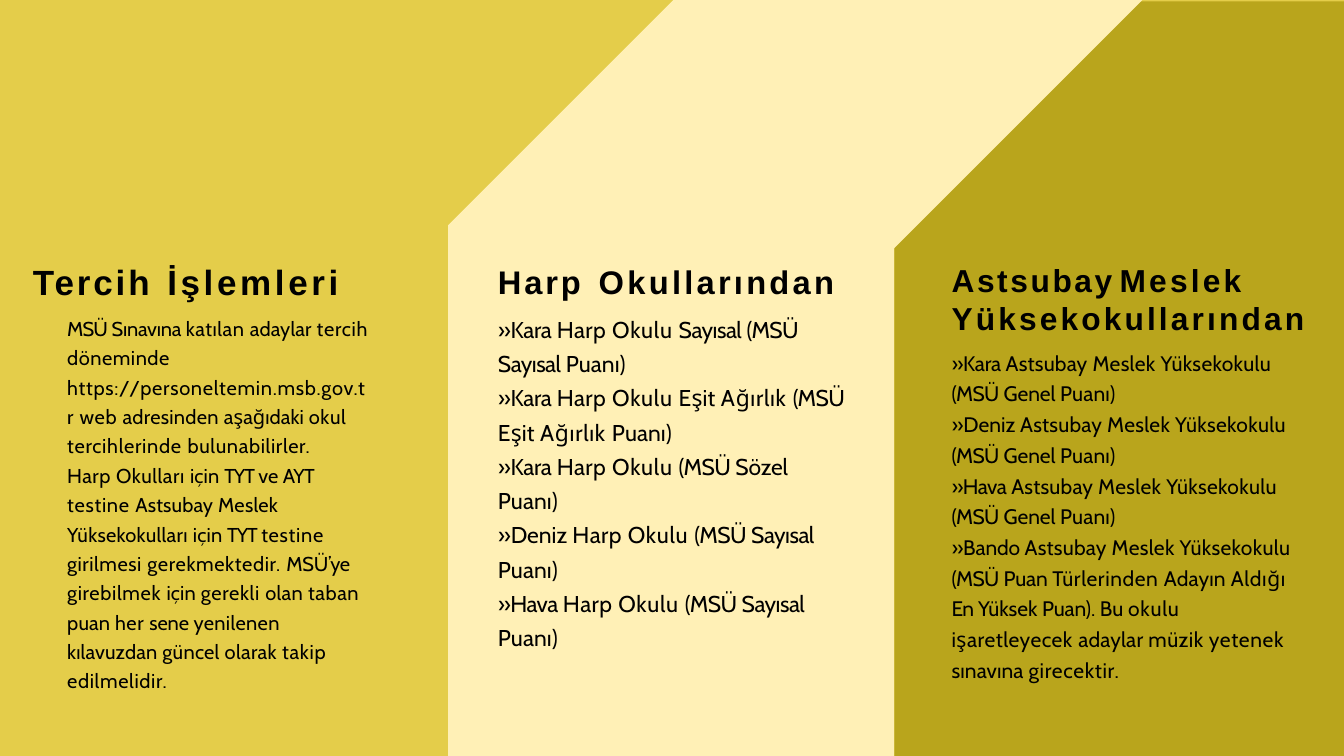
from dataclasses import dataclass
from itertools import groupby
from typing import Any

from lxml.etree import SubElement
from pptx import Presentation
from pptx.dml.color import RGBColor
from pptx.enum.shapes import MSO_SHAPE as Preset
from pptx.enum.text import MSO_ANCHOR as Anchor, PP_ALIGN as Align
from pptx.oxml.ns import qn
from pptx.util import Emu, Inches, Pt

COLUMNS, ROWS = 20, 11.25
CELL = Inches(1)
GOLD = RGBColor(0xE4, 0xCD, 0x4A)
CREAM = RGBColor(0xFF, 0xF0, 0xB6)
OLIVE = RGBColor(0xB9, 0xA5, 0x1C)
BLACK = RGBColor(0, 0, 0)
MIDDLE_LEFT, RIGHT_LEFT, BEND = 6.67, 13.31, 3.35

TRACKING_GROUPS = {
    -1.1: "TYT",
    -0.9: "MSÜ",
    -0.8: "En",
    -0.7: "AYT",
    -0.65: "(MSÜ",
    -0.5: "Sayısal »Hava",
    -0.3: "»Kara MSÜ’ye",
    -0.2: "Sınavına Sözel Puan Puan). »Bando",
    -0.1: "sene Genel Yüksek",
    0: "»Deniz ve Bu",
    0.1: "Puanı) aşağıdaki sınavına",
    0.3: "adresinden Meslek Yüksekokulu Yüksekokulları güncel",
    0.4: "olan yenilenen olarak müzik",
    0.5: "Harp işaretleyecek",
    0.6: "katılan döneminde girilmesi taban her Türlerinden Okulları",
    0.7: "web okul bulunabilirler. gerekmektedir. girebilmek gerekli "
         "edilmelidir. Aldığı yetenek girecektir.",
    0.8: "tercih https://personeltemin.msb.gov.tr tercihlerinde testine "
         "takip Okulu Ağırlık okulu",
}
TRACKING = {word: points for points, words in TRACKING_GROUPS.items()
            for word in words.split()}
DEFAULT_TRACKING = 0.2


@dataclass(frozen=True)
class Span:
    text: str
    tracking: float


@dataclass(frozen=True)
class Para:
    spans: list[Span]
    font: dict[str, Any]
    layout: dict[str, Any]
    right_margin: float = 0
    tab: float | None = None


@dataclass(frozen=True)
class TextBlock:
    left: float
    top: float
    width: float
    height: float
    inset_top: float
    paras: list[Para]


def cells(count: float) -> Emu:
    return Emu(round(count * CELL))


def heading(spans: list[Span], size: float, tab: float | None = None,
            spacing: Any = 1.0) -> Para:
    font = {"name": "Arial", "size": Pt(size), "bold": True}
    return Para(spans, font, {"line_spacing": spacing}, tab=tab)


def body(texts: list[str], size: float, spacing: float, right_margin: float,
         before: float = 0) -> list[Para]:
    paras = []
    for index, text in enumerate(texts):
        groups = groupby(text.split(), lambda word: TRACKING.get(word, DEFAULT_TRACKING))
        spans = [Span(" ".join(words) + " ", tracking) for tracking, words in groups]
        spans[-1] = Span(spans[-1].text.rstrip(), spans[-1].tracking)
        layout = {"line_spacing": spacing, "space_before": Pt(0 if index else before)}
        font = {"name": "Cabin", "size": Pt(size), "bold": False}
        paras.append(Para(spans, font, layout, right_margin))
    return paras


def paint(shape: Any, color: RGBColor) -> None:
    shape.shadow.inherit = False
    shape.fill.solid()
    shape.fill.fore_color.rgb = color
    shape.line.fill.background()


def draw_panel(page: Any, left: float, top: float, right: float, color: RGBColor) -> None:
    panel = page.shapes.add_shape(Preset.RECTANGLE, cells(left), cells(top),
                                  cells(right - left), cells(ROWS - top))
    paint(panel, color)


def draw_polygon(page: Any, points: list[tuple[float, float]], color: RGBColor) -> None:
    start, *rest = [(cells(x), cells(y)) for x, y in points]
    builder = page.shapes.build_freeform(*start)
    builder.add_line_segments(rest, close=True)
    paint(builder.convert_to_shape(), color)


def write_para(para: Any, content: Para) -> None:
    properties = para._p.get_or_add_pPr()
    properties.set("marL", str(cells(0.01)))
    properties.set("marR", str(cells(content.right_margin)))
    properties.set("indent", "0")
    if content.tab is not None:
        tabs = SubElement(properties, qn("a:tabLst"))
        SubElement(tabs, qn("a:tab"), pos=str(cells(content.tab)), algn="l")
    for name, value in {"alignment": Align.LEFT, **content.layout}.items():
        setattr(para, name, value)
    for span in content.spans:
        run = para.add_run()
        run.text = span.text
        for name, value in content.font.items():
            setattr(run.font, name, value)
        run.font.color.rgb = BLACK
        run._r.get_or_add_rPr().set("spc", str(round(span.tracking * 100)))


def draw_text(page: Any, block: TextBlock) -> None:
    box = page.shapes.add_textbox(cells(block.left), cells(block.top),
                                  cells(block.width), cells(block.height))
    frame = box.text_frame
    settings = {"word_wrap": True, "vertical_anchor": Anchor.TOP,
                "margin_left": 0, "margin_right": 0, "margin_bottom": 0,
                "margin_top": cells(block.inset_top)}
    for name, value in settings.items():
        setattr(frame, name, value)
    for index, content in enumerate(block.paras):
        write_para(frame.add_paragraph() if index else frame.paragraphs[0], content)


APPLICATION = [
    "MSÜ Sınavına katılan adaylar tercih döneminde https://personeltemin.msb.gov.tr "
    "web adresinden aşağıdaki okul tercihlerinde bulunabilirler.",
    "Harp Okulları için TYT ve AYT testine Astsubay Meslek Yüksekokulları için TYT "
    "testine girilmesi gerekmektedir. MSÜ’ye girebilmek için gerekli olan taban "
    "puan her sene yenilenen kılavuzdan güncel olarak takip edilmelidir.",
]
ACADEMIES = [f"»{name} (MSÜ {score} Puanı)" for name, score in [
    ("Kara Harp Okulu Sayısal", "Sayısal"),
    ("Kara Harp Okulu Eşit Ağırlık", "Eşit Ağırlık"),
    ("Kara Harp Okulu", "Sözel"),
    ("Deniz Harp Okulu", "Sayısal"),
    ("Hava Harp Okulu", "Sayısal"),
]]
VOCATIONAL = [f"»{force} Astsubay Meslek Yüksekokulu (MSÜ Genel Puanı)"
              for force in ("Kara", "Deniz", "Hava")] + [
    "»Bando Astsubay Meslek Yüksekokulu (MSÜ Puan Türlerinden Adayın Aldığı "
    "En Yüksek Puan). Bu okulu işaretleyecek adaylar müzik yetenek "
    "sınavına girecektir.",
]

BLOCKS = [
    TextBlock(0.48, 3.86, 4.69, 0.66, 0.02, [
        heading([Span("Tercih\t", 3.1), Span("İşlemleri", 3.9)], 37.5, 2.07)]),
    TextBlock(0.99, 4.62, 4.83, 5.72, 0.01, body(APPLICATION, 21.5, 1.22, 0.27)),
    TextBlock(7.4, 3.59, 5.49, 6.12, 0.31, [
        heading([Span("Harp\t", 3), Span("Okullarından", 3.5)], 35, 1.51),
        *body(ACADEMIES, 24.5, 1.25, 0.26, 7.7)]),
    TextBlock(14.15, 3.86, 5.41, 6.32, 0.02, [
        heading([Span("Astsubay\t", 2.8), Span("Meslek", 3.5)], 34, 2.66, Pt(40.6)),
        heading([Span("Yüksekokullarından", 3.4)], 34, spacing=Pt(40.6)),
        *body(VOCATIONAL, 22.5, 1.22, 0.21, 8.6)]),
]


def main() -> None:
    deck = Presentation()
    deck.slide_width, deck.slide_height = cells(COLUMNS), cells(ROWS)
    page = deck.slides.add_slide(deck.slide_layouts[6])
    page.background.fill.solid()
    page.background.fill.fore_color.rgb = GOLD
    draw_panel(page, MIDDLE_LEFT, BEND, RIGHT_LEFT, CREAM)
    draw_panel(page, RIGHT_LEFT, 0.02, COLUMNS, OLIVE)
    ribbon = [(MIDDLE_LEFT + BEND, 0), (17, 0), (10.16, 6.84), (MIDDLE_LEFT, BEND)]
    draw_polygon(page, ribbon, CREAM)
    for block in BLOCKS:
        draw_text(page, block)
    deck.save("out.pptx")


if __name__ == "__main__":
    main()
